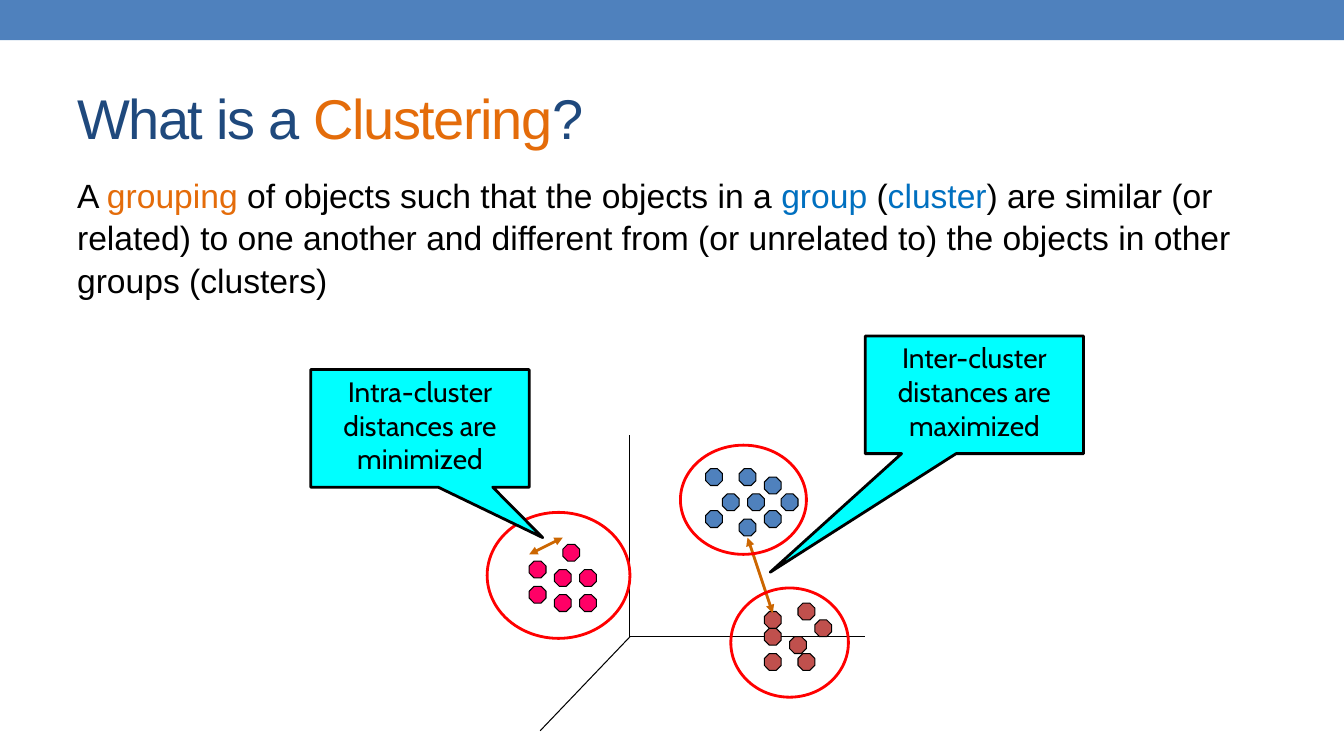
from lxml.etree import SubElement
from pptx import Presentation
from pptx.dml.color import RGBColor
from pptx.enum.shapes import MSO_CONNECTOR, MSO_SHAPE
from pptx.enum.text import MSO_ANCHOR, PP_ALIGN
from pptx.oxml.ns import qn
from pptx.util import Inches, Pt

COLS, ROWS = 160, 90
WIDE, HIGH = Inches(13.333), Inches(7.5)
LIFT = 0.2  # axes and dots sit a little above the grid rows

HUES = {
    "bar": "4F81BD", "title": "1F497D", "accent": "E46C0A", "term": "0070C0",
    "ink": "000000", "note": "00FFFF", "ring": "FF0000", "arrow": "CC6600",
    "blue": "4F81BD", "pink": "FF0066", "red": "C0504D",
}

DOTS = {
    "blue": [(86, 59), (89, 59), (88, 56), (88, 62), (93, 59),
             (91, 57), (84, 56), (91, 61), (84, 61)],
    "pink": [(63, 67), (66, 68), (66, 71), (69, 68), (67, 65),
             (69, 71), (63, 70)],
    "red": [(91, 73), (97, 74), (94, 76), (91, 78), (95, 78),
            (91, 75), (95, 72)],
}
RINGS = [(58, 61, 17, 15), (81, 53, 15, 13), (87, 70, 14, 13)]


def hue(name):
    return RGBColor.from_string(HUES[name])


def place(*cells):
    """Turn alternating columns and rows into slide lengths."""
    return [round(cell * (HIGH / ROWS if i % 2 else WIDE / COLS))
            for i, cell in enumerate(cells)]


def stroke(line, name, width):
    line.color.rgb = hue(name)
    line.width = Pt(width)


def shape(slide, kind, box, fill=None, edge=None, width=0.75):
    item = slide.shapes.add_shape(kind, *place(*box))
    item.shadow.inherit = False
    if fill:
        item.fill.solid()
        item.fill.fore_color.rgb = hue(fill)
    else:
        item.fill.background()
    if edge:
        stroke(item.line, edge, width)
    else:
        item.line.fill.background()
    return item


def write(item, runs, size, font="Arial", align=PP_ALIGN.LEFT,
          anchor=MSO_ANCHOR.TOP, space=1.0, track=0, top=0.05):
    """Fill an item with one paragraph of (text, colour) runs."""
    frame = item.text_frame
    frame.word_wrap = True
    frame.vertical_anchor = anchor
    frame.margin_top = Inches(top)
    para = frame.paragraphs[0]
    para.alignment = align
    para.line_spacing = space
    for words, name in runs:
        run = para.add_run()
        run.text = words
        run.font.name = font
        run.font.size = Pt(size)
        run.font.color.rgb = hue(name)
        if track:
            run.font._element.set("spc", str(track * 100))


def text(slide, box, runs, size, **form):
    write(slide.shapes.add_textbox(*place(*box)), runs, size, **form)


def link(slide, ends, name, width=0.75, heads=False):
    item = slide.shapes.add_connector(MSO_CONNECTOR.STRAIGHT, *place(*ends))
    stroke(item.line, name, width)
    props = item._element.spPr
    if heads:
        for end in ("a:headEnd", "a:tailEnd"):
            SubElement(props.find(qn("a:ln")), qn(end), type="triangle")
    SubElement(props, qn("a:effectLst"))


def axes(slide):
    x, y = 75, 76 - LIFT
    link(slide, (x, y - 24, x, y), "ink")
    link(slide, (x, y, x + 28, y), "ink")
    path = slide.shapes.build_freeform(*place(x, y))
    path.add_line_segments([place(64.3, 87)], close=False)
    depth = path.convert_to_shape()
    depth.shadow.inherit = False
    depth.fill.background()
    stroke(depth.line, "ink", 0.75)


def callout(slide, x, y, tip, words):
    item = shape(slide, MSO_SHAPE.RECTANGULAR_CALLOUT, (x, y, 26, 14),
                 "note", "ink", 2)
    item.adjustments[0], item.adjustments[1] = tip
    write(item, [(words, "ink")], 20, font="Cabin", align=PP_ALIGN.CENTER)


def main():
    deck = Presentation()
    deck.slide_width, deck.slide_height = WIDE, HIGH
    slide = deck.slides.add_slide(deck.slide_layouts[6])

    shape(slide, MSO_SHAPE.RECTANGLE, (0, 0, COLS, 4.8), "bar")
    text(slide, (8, 7, 144, 13),
         [("What is a ", "title"), ("Clustering", "accent"), ("?", "title")],
         40, anchor=MSO_ANCHOR.MIDDLE, track=-1, top=0.13)
    text(slide, (8, 20, 145, 17),
         [("A ", "ink"), ("grouping", "accent"),
          (" of objects such that the objects in a ", "ink"),
          ("group", "term"), (" (", "ink"), ("cluster", "term"),
          (") are similar (or related) to one another and different from "
           "(or unrelated to) the objects in other groups (clusters)", "ink")],
         24, space=1.05)

    axes(slide)
    for name, spots in DOTS.items():
        for x, y in spots:
            shape(slide, MSO_SHAPE.OCTAGON, (x, y - LIFT, 2, 2), name, "ink")

    link(slide, (92, 73, 89, 64), "arrow", 2, heads=True)
    callout(slide, 103, 40, (-0.935, 1.509),
            "Inter-cluster distances are maximized")
    for ring in RINGS:
        shape(slide, MSO_SHAPE.OVAL, ring, edge="ring", width=2)
    link(slide, (63, 66, 67, 64), "arrow", 2, heads=True)
    callout(slide, 37, 44, (0.562, 0.929),
            "Intra-cluster distances are minimized")

    deck.save("out.pptx")


if __name__ == "__main__":
    main()
